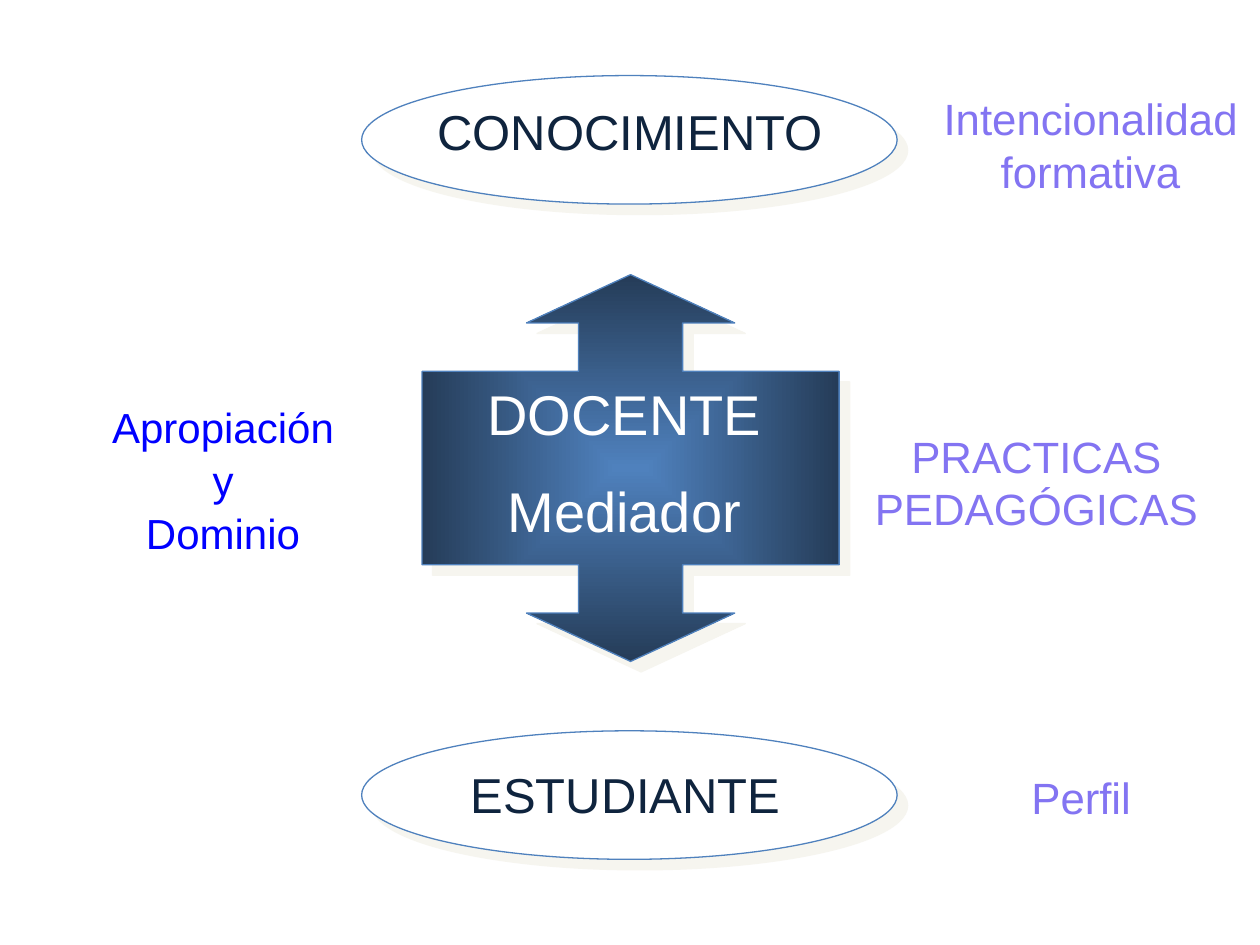
from dataclasses import dataclass

from lxml import etree
from pptx import Presentation
from pptx.dml.color import RGBColor
from pptx.enum.shapes import MSO_SHAPE
from pptx.enum.text import MSO_AUTO_SIZE, PP_ALIGN
from pptx.oxml.ns import qn
from pptx.util import Inches, Pt

ELLIPSE = MSO_SHAPE.OVAL
CALLOUT = MSO_SHAPE.UP_DOWN_ARROW_CALLOUT
CENTER = PP_ALIGN.CENTER
FIT_SHAPE = MSO_AUTO_SIZE.SHAPE_TO_FIT_TEXT
BLANK_LAYOUT = 6


@dataclass(frozen=True)
class Theme:
    font: str = "Arial"
    white: str = "FFFFFF"
    outline: str = "4F81BD"
    callout_edge: str = "253C58"
    shadow: str = "EEECE1"
    pole_text: str = "0F243E"
    aspect_text: str = "8374F2"
    mastery_text: str = "0000FF"
    pole_size: int = 28
    teacher_size: int = 32
    aspect_size: int = 25
    mastery_size: int = 24


THEME = Theme()


def rgb(value):
    return RGBColor.from_string(value)


def child(parent, tag, **attributes):
    return etree.SubElement(parent, qn(tag), attributes)


def add_shadow(shape):
    """Cast a half-transparent shadow towards the lower right."""
    shape.shadow.inherit = False
    effects = shape._element.spPr.find(qn("a:effectLst"))
    shadow = child(effects, "a:outerShdw", dist=str(Pt(8.5)), dir="2700000",
                   algn="ctr", rotWithShape="0")
    color = child(shadow, "a:srgbClr", val=THEME.shadow)
    child(color, "a:alpha", val="50000")


def add_outlined(slide, kind, box):
    shape = slide.shapes.add_shape(kind, *map(Inches, box))
    shape.line.color.rgb = rgb(THEME.outline)
    shape.line.width = Pt(0.75)
    add_shadow(shape)
    return shape


def add_pole(slide, top):
    ellipse = add_outlined(slide, ELLIPSE, (2.87, top, 4.25, 1.02))
    ellipse.fill.solid()
    ellipse.fill.fore_color.rgb = rgb(THEME.white)


def fill_from_center(shape, inner, outer):
    """Fill with a rectangular gradient that spreads from the middle."""
    shape.fill.gradient()
    for stop, color in zip(shape.fill.gradient_stops, (inner, outer)):
        stop.color.rgb = rgb(color)
    gradient = shape._element.spPr.find(qn("a:gradFill"))
    gradient.remove(gradient.find(qn("a:lin")))
    spread = child(gradient, "a:path", path="rect")
    child(spread, "a:fillToRect", l="50000", t="50000", r="50000", b="50000")


def add_mediator_callout(slide):
    callout = add_outlined(slide, CALLOUT, (3.35, 2.18, 3.31, 3.07))
    for index, value in enumerate((0.269, 0.269, 0.125, 0.5)):
        callout.adjustments[index] = value
    fill_from_center(callout, THEME.outline, THEME.callout_edge)


def add_label(slide, box, lines, size, color, line_spacing=None):
    """Add centred text with a gap of about half a line between paragraphs."""
    label = slide.shapes.add_textbox(*map(Inches, box))
    frame = label.text_frame
    frame.word_wrap = True
    frame.auto_size = FIT_SHAPE
    for index, line in enumerate(lines):
        paragraph = frame.add_paragraph() if index else frame.paragraphs[0]
        paragraph.alignment = CENTER
        paragraph.line_spacing = line_spacing
        paragraph.space_before = Pt(round(size * 0.54) if index else 0)
        run = paragraph.add_run()
        run.text = line
        run.font.name = THEME.font
        run.font.size = Pt(size)
        run.font.color.rgb = rgb(color)


def main():
    presentation = Presentation()
    presentation.slide_width = Inches(10)
    presentation.slide_height = Inches(7.5)
    slide = presentation.slides.add_slide(
        presentation.slide_layouts[BLANK_LAYOUT])

    for top in (5.8, 0.6):
        add_pole(slide, top)
    for box, pole in (((2.95, 0.76, 4.1, 0.57), "CONOCIMIENTO"),
                      ((3.35, 6.02, 3.23, 0.57), "ESTUDIANTE")):
        add_label(slide, box, [pole], THEME.pole_size, THEME.pole_text)

    add_mediator_callout(slide)
    add_label(slide, (3.5, 2.96, 2.91, 1.43), ["DOCENTE", "Mediador"],
              THEME.teacher_size, THEME.white)
    add_label(slide, (0.59, 3.28, 2.36, 1.22), ["Apropiación", "y", "Dominio"],
              THEME.mastery_size, THEME.mastery_text, line_spacing=0.6)

    for box, aspect in (
            ((7.2, 0.68, 2.91, 0.93), "Intencionalidad formativa"),
            ((7.44, 6.07, 2.28, 0.52), "Perfil"),
            ((6.81, 3.36, 2.83, 0.93), "PRACTICAS PEDAGÓGICAS")):
        add_label(slide, box, [aspect], THEME.aspect_size, THEME.aspect_text)

    presentation.save("out.pptx")


if __name__ == "__main__":
    main()
